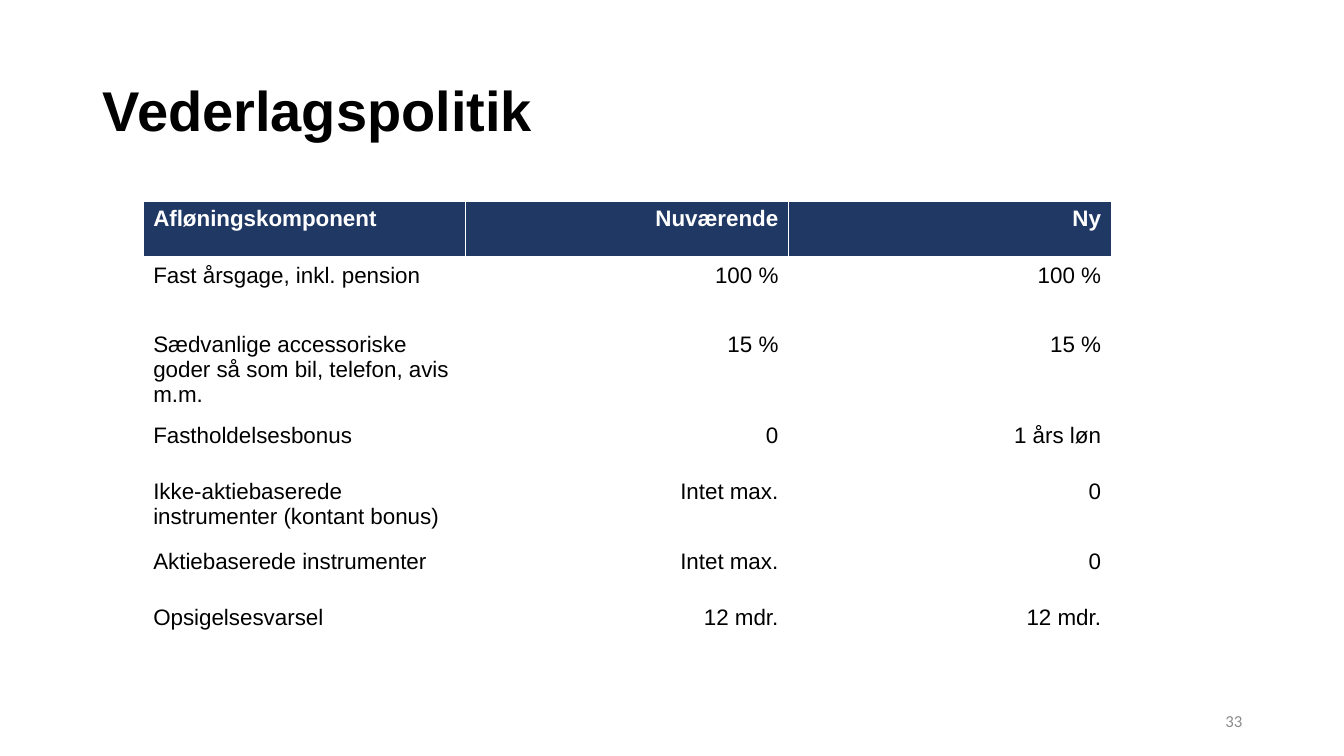
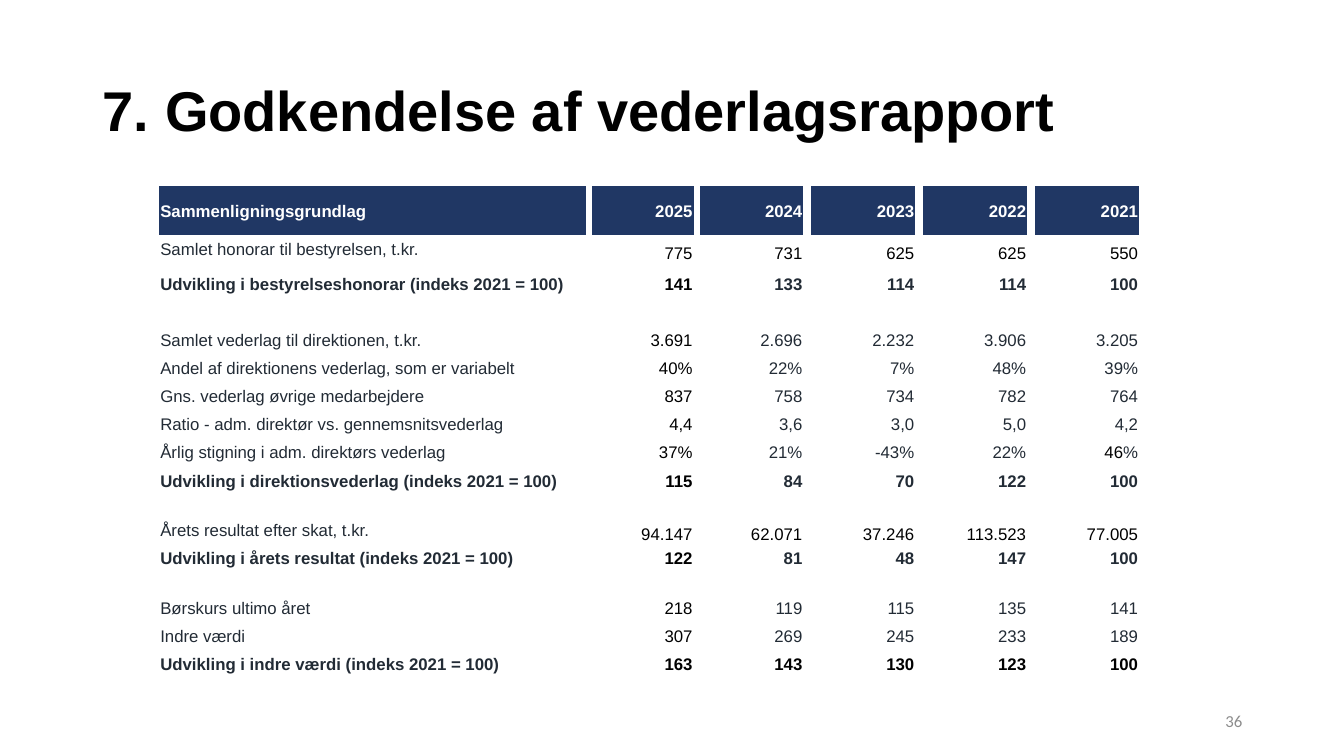
from dataclasses import dataclass

from lxml import etree
from pptx import Presentation
from pptx.dml.color import RGBColor
from pptx.enum import text as t
from pptx.oxml import ns
from pptx.util import Inches, Pt


@dataclass(frozen=True)
class Theme:
    font: str = "Arial"
    number_font: str = "Calibri"
    black: str = "000000"
    white: str = "FFFFFF"
    slate: str = "222B35"
    grey: str = "8C8C8C"
    policy_navy: str = "203864"
    report_navy: str = "203764"
    title_size: int = 40
    policy_size: int = 16
    report_size: int = 12
    number_size: int = 12
    spacer_size: int = 4


theme = Theme()
LEFT, RIGHT = t.PP_ALIGN.LEFT, t.PP_ALIGN.RIGHT
TOP, MIDDLE, BOTTOM = t.MSO_ANCHOR.TOP, t.MSO_ANCHOR.MIDDLE, t.MSO_ANCHOR.BOTTOM
NO_STYLE = "{2D5ABB26-0587-4C30-8999-92F81FD0307C}"


def add_text(frame, text, *, size, color=theme.black, bold=False,
             font=theme.font, align=LEFT, anchor=MIDDLE):
    """Append a formatted run to the frame's first paragraph."""
    frame.vertical_anchor = anchor
    paragraph = frame.paragraphs[0]
    paragraph.alignment = align
    run = paragraph.add_run()
    run.text = text
    run.font.name, run.font.size, run.font.bold = font, Pt(size), bold
    run.font.color.rgb = RGBColor.from_string(color)
    return paragraph


def add_plain_table(slide, left, top, widths, heights):
    """Add an unstyled table with the given column widths and row heights."""
    table = slide.shapes.add_table(
        len(heights), len(widths), Inches(left), Inches(top),
        Inches(sum(widths)), Inches(sum(heights))).table
    table.horz_banding = False
    table._tbl.tblPr.find(ns.qn("a:tableStyleId")).text = NO_STYLE
    for column, width in zip(table.columns, widths):
        column.width = Inches(width)
    for row, height in zip(table.rows, heights):
        row.height = Inches(height)
    return table


prs = Presentation()
prs.slide_width, prs.slide_height = Inches(13.33), Inches(7.5)

# Titles and page numbers
slides = []
for heading, page in [("Vederlagspolitik", "33"),
                      ("7. Godkendelse af vederlagsrapport", "36")]:
    slide = prs.slides.add_slide(prs.slide_layouts[5])
    title = slide.shapes.title
    title.left, title.top = Inches(0.92), Inches(0.4)
    title.width, title.height = Inches(11.5), Inches(1.45)
    title.text_frame.auto_size = t.MSO_AUTO_SIZE.NONE
    add_text(title.text_frame, heading, size=theme.title_size,
             bold=True).line_spacing = 0.9
    page_number = slide.shapes.add_textbox(
        Inches(9.42), Inches(6.95), Inches(3), Inches(0.4))
    page_number.text_frame.word_wrap = True
    add_text(page_number.text_frame, page, size=theme.number_size,
             color=theme.grey, font=theme.number_font, align=RIGHT)
    slides.append(slide)
policy_slide, report_slide = slides

# Remuneration policy: component, current, new
policy_rows = [
    (0.56, "Afløningskomponent", "Nuværende", "Ny"),
    (0.69, "Fast årsgage, inkl. pension", "100 %", "100 %"),
    (0.76, "Sædvanlige accessoriske goder så som bil, telefon, avis m.m.",
     "15 %", "15 %"),
    (0.56, "Fastholdelsesbonus", "0", "1 års løn"),
    (0.69, "Ikke-aktiebaserede instrumenter (kontant bonus)", "Intet max.", "0"),
    (0.56, "Aktiebaserede instrumenter", "Intet max.", "0"),
    (0.56, "Opsigelsesvarsel", "12 mdr.", "12 mdr."),
]
policy = add_plain_table(policy_slide, 1.42, 2, [3.2] * 3,
                         [row[0] for row in policy_rows])
for r, (_, *entries) in enumerate(policy_rows):
    header = r == 0
    for c, entry in enumerate(entries):
        cell = policy.cell(r, c)
        cell.fill.solid()
        cell.fill.fore_color.rgb = RGBColor.from_string(
            theme.policy_navy if header else theme.white)
        add_text(cell.text_frame, entry, size=theme.policy_size, bold=header,
                 color=theme.white if header else theme.black,
                 align=RIGHT if c else LEFT)
        cell.vertical_anchor = TOP
        # White cell borders, heavier below the header
        properties = cell._tc.get_or_add_tcPr()
        for i, side in enumerate(("lnL", "lnR", "lnT", "lnB")):
            points = 3 if header and side == "lnB" else 1
            border = etree.Element(ns.qn(f"a:{side}"), w=str(Pt(points)))
            fill = etree.SubElement(border, ns.qn("a:solidFill"))
            etree.SubElement(fill, ns.qn("a:srgbClr"), val=theme.white)
            properties.insert(i, border)

# Remuneration report: kind of row, label, values for 2025 to 2021
report_rows = [
    ("header", "Sammenligningsgrundlag", "2025 2024 2023 2022 2021"),
    ("total", "Samlet honorar til bestyrelsen, t.kr.", "775 731 625 625 550"),
    ("index", "Udvikling i bestyrelseshonorar (indeks 2021 = 100)",
     "141 133 114 114 100"),
    ("spacer", "", ""),
    ("plain", "Samlet vederlag til direktionen, t.kr.",
     "3.691 2.696 2.232 3.906 3.205"),
    ("plain", "Andel af direktionens vederlag, som er variabelt",
     "40% 22% 7% 48% 39%"),
    ("plain", "Gns. vederlag øvrige medarbejdere", "837 758 734 782 764"),
    ("plain", "Ratio - adm. direktør vs. gennemsnitsvederlag",
     "4,4 3,6 3,0 5,0 4,2"),
    ("plain", "Årlig stigning i adm. direktørs vederlag",
     "37% 21% -43% 22% 46%"),
    ("index", "Udvikling i direktionsvederlag (indeks 2021 = 100)",
     "115 84 70 122 100"),
    ("spacer", "", ""),
    ("total", "Årets resultat efter skat, t.kr.",
     "94.147 62.071 37.246 113.523 77.005"),
    ("index", "Udvikling i årets resultat (indeks 2021 = 100)",
     "122 81 48 147 100"),
    ("spacer", "", ""),
    ("plain", "Børskurs ultimo året", "218 119 115 135 141"),
    ("plain", "Indre værdi", "307 269 245 233 189"),
    ("final", "Udvikling i indre værdi (indeks 2021 = 100)",
     "163 143 130 123 100"),
]
row_heights = [{"header": 0.48, "spacer": 0.21}.get(kind, 0.28)
               for kind, *_ in report_rows]
row_heights[2] = 0.41
column_widths = [4.23, 0.05, 1.01, 0.05, 1.03] + [0.08, 1.03] * 3
report = add_plain_table(report_slide, 1.58, 1.85, column_widths, row_heights)

for r, (kind, label, values) in enumerate(report_rows):
    entries = [label, *values.split()]
    for c in range(len(column_widths)):
        cell = report.cell(r, c)
        cell.margin_left = cell.margin_right = cell.margin_top = Inches(0.01)
        cell.margin_bottom = 0
        is_gap = c % 2 == 1
        cell.fill.solid()
        cell.fill.fore_color.rgb = RGBColor.from_string(
            theme.report_navy if kind == "header" and not is_gap else theme.white)
        if is_gap or kind == "spacer":
            # Small type keeps empty cells from stretching their row
            end = cell.text_frame.paragraphs[0]._p.get_or_add_endParaRPr()
            end.set("sz", str(theme.spacer_size * 100))
            continue

        entry = entries[c // 2]
        if kind == "header":
            color = theme.white
        elif c == 2 or (c > 2 and kind in ("total", "final")):
            color = theme.black
        else:
            color = theme.slate
        style = dict(size=theme.report_size, align=RIGHT if c else LEFT,
                     bold=kind in ("header", "index", "final"))
        if entry == "46%":
            add_text(cell.text_frame, "46", color=theme.black, **style)
            entry = "%"
        add_text(cell.text_frame, entry, color=color, **style)
        cell.vertical_anchor = BOTTOM if kind == "total" and c else MIDDLE

prs.save("out.pptx")
